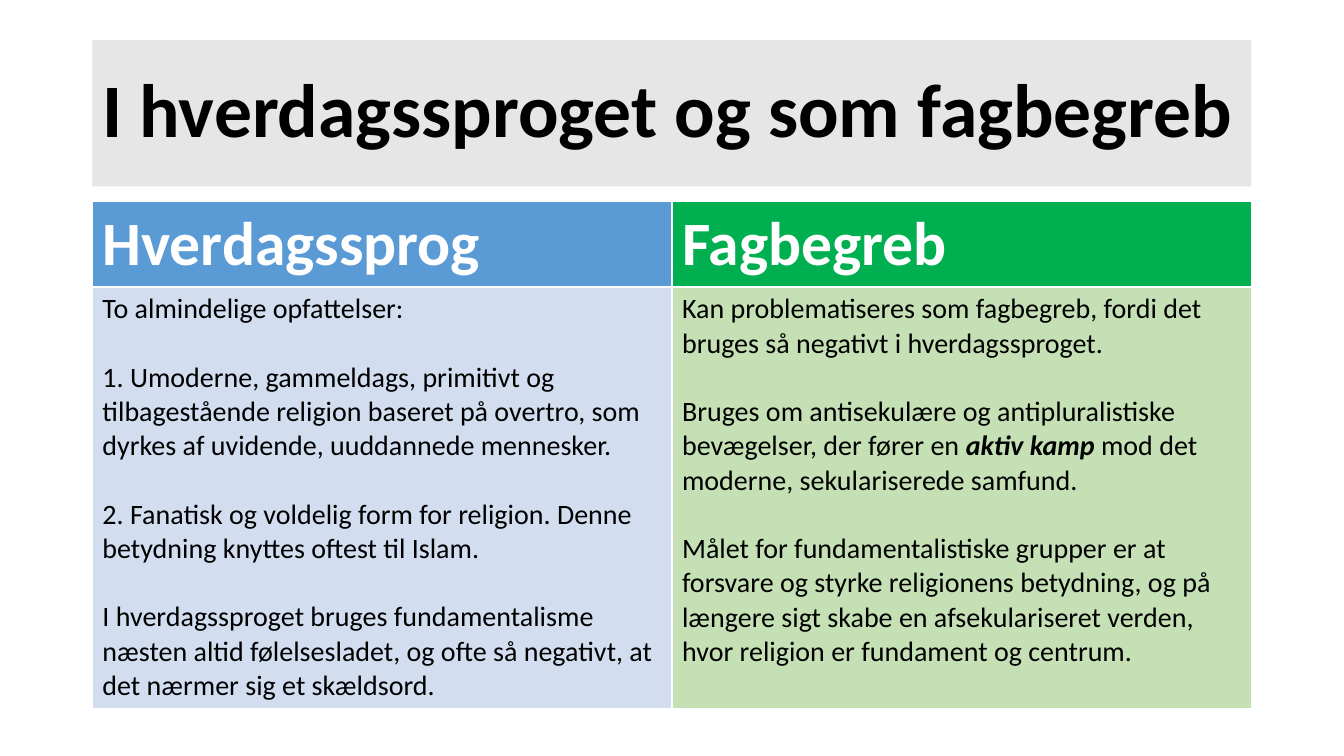
import pptx
import pptx.dml.color
import pptx.enum.shapes
import pptx.enum.text
import pptx.util

Pt = pptx.util.Pt
RGBColor = pptx.dml.color.RGBColor

BLACK = RGBColor(0x00, 0x00, 0x00)
WHITE = RGBColor(0xFF, 0xFF, 0xFF)
TITLE_GREY = RGBColor(0xE7, 0xE6, 0xE6)
BLUE = RGBColor(0x5B, 0x9B, 0xD5)
GREEN = RGBColor(0x00, 0xB0, 0x50)
PALE_BLUE = RGBColor(0xD2, 0xDE, 0xEF)
PALE_GREEN = RGBColor(0xC5, 0xE0, 0xB4)

FONT = "Calibri"
PARAGRAPH_GAP = 24.4
HEADER_HEIGHT = 60.6

TITLE = "I hverdagssproget og som fagbegreb"

# Each paragraph is a list of runs; a run is (text, emphasized).
COLUMNS = [
    ("Hverdagssprog", BLUE, PALE_BLUE, [
        [("To almindelige opfattelser:", False)],
        [("1. Umoderne, gammeldags, primitivt og tilbagestående religion baseret på "
          "overtro, som dyrkes af uvidende, uuddannede mennesker.", False)],
        [("2. Fanatisk og voldelig form for religion. Denne betydning knyttes oftest "
          "til Islam.", False)],
        [("I hverdagssproget bruges fundamentalisme næsten altid følelsesladet, og "
          "ofte så negativt, at det nærmer sig et skældsord.", False)],
    ]),
    ("Fagbegreb", GREEN, PALE_GREEN, [
        [("Kan problematiseres som fagbegreb, fordi det bruges så negativt i "
          "hverdagssproget.", False)],
        [("Bruges om antisekulære og antipluralistiske bevægelser, der fører en ", False),
         ("aktiv kamp ", True),
         ("mod det moderne, sekulariserede samfund.", False)],
        [("Målet for fundamentalistiske grupper er at forsvare og styrke religionens "
          "betydning, og på længere sigt skabe en afsekulariseret verden, hvor "
          "religion er fundament og centrum.", False)],
    ]),
]


def add_text(paragraph, text, size, color=BLACK, bold=False, italic=False):
    run = paragraph.add_run()
    run.text = text
    run.font.name = FONT
    run.font.size = Pt(size)
    run.font.color.rgb = color
    run.font.bold = bold
    run.font.italic = italic


def fill_solid(target, color):
    target.fill.solid()
    target.fill.fore_color.rgb = color


def add_title(slide, left, top, width, height):
    shape = slide.shapes.add_shape(
        pptx.enum.shapes.MSO_SHAPE.RECTANGLE, Pt(left), Pt(top), Pt(width), Pt(height))
    shape.shadow.inherit = False
    fill_solid(shape, TITLE_GREY)
    shape.line.fill.background()
    shape.text_frame.word_wrap = True
    shape.text_frame.vertical_anchor = pptx.enum.text.MSO_ANCHOR.MIDDLE
    paragraph = shape.text_frame.paragraphs[0]
    paragraph.alignment = pptx.enum.text.PP_ALIGN.LEFT
    paragraph.line_spacing = 0.9
    add_text(paragraph, TITLE, size=54, bold=True)


def fill_body_cell(cell, paragraphs):
    for index, runs in enumerate(paragraphs):
        if index == 0:
            paragraph = cell.text_frame.paragraphs[0]
        else:
            paragraph = cell.text_frame.add_paragraph()
            paragraph.space_before = Pt(PARAGRAPH_GAP)
        for text, emphasized in runs:
            add_text(paragraph, text, size=20, bold=emphasized, italic=emphasized)


def add_comparison_table(slide, left, top, width, height):
    """Place a header row and a body row with one column per use of the word."""
    table = slide.shapes.add_table(
        2, len(COLUMNS), Pt(left), Pt(top), Pt(width), Pt(height)).table
    table.rows[0].height = Pt(HEADER_HEIGHT)
    table.rows[1].height = Pt(height - HEADER_HEIGHT)
    for index, (heading, header_color, body_color, paragraphs) in enumerate(COLUMNS):
        table.columns[index].width = Pt(width / len(COLUMNS))
        header, body = table.cell(0, index), table.cell(1, index)
        fill_solid(header, header_color)
        add_text(header.text_frame.paragraphs[0], heading, size=44, color=WHITE, bold=True)
        fill_solid(body, body_color)
        fill_body_cell(body, paragraphs)


def main():
    presentation = pptx.Presentation()
    presentation.slide_width = Pt(960)
    presentation.slide_height = Pt(540)
    slide = presentation.slides.add_slide(presentation.slide_layouts[6])
    add_title(slide, left=66, top=28.75, width=828, height=104.4)
    add_comparison_table(slide, left=66, top=144, width=828, height=355)
    presentation.save("out.pptx")


if __name__ == "__main__":
    main()
